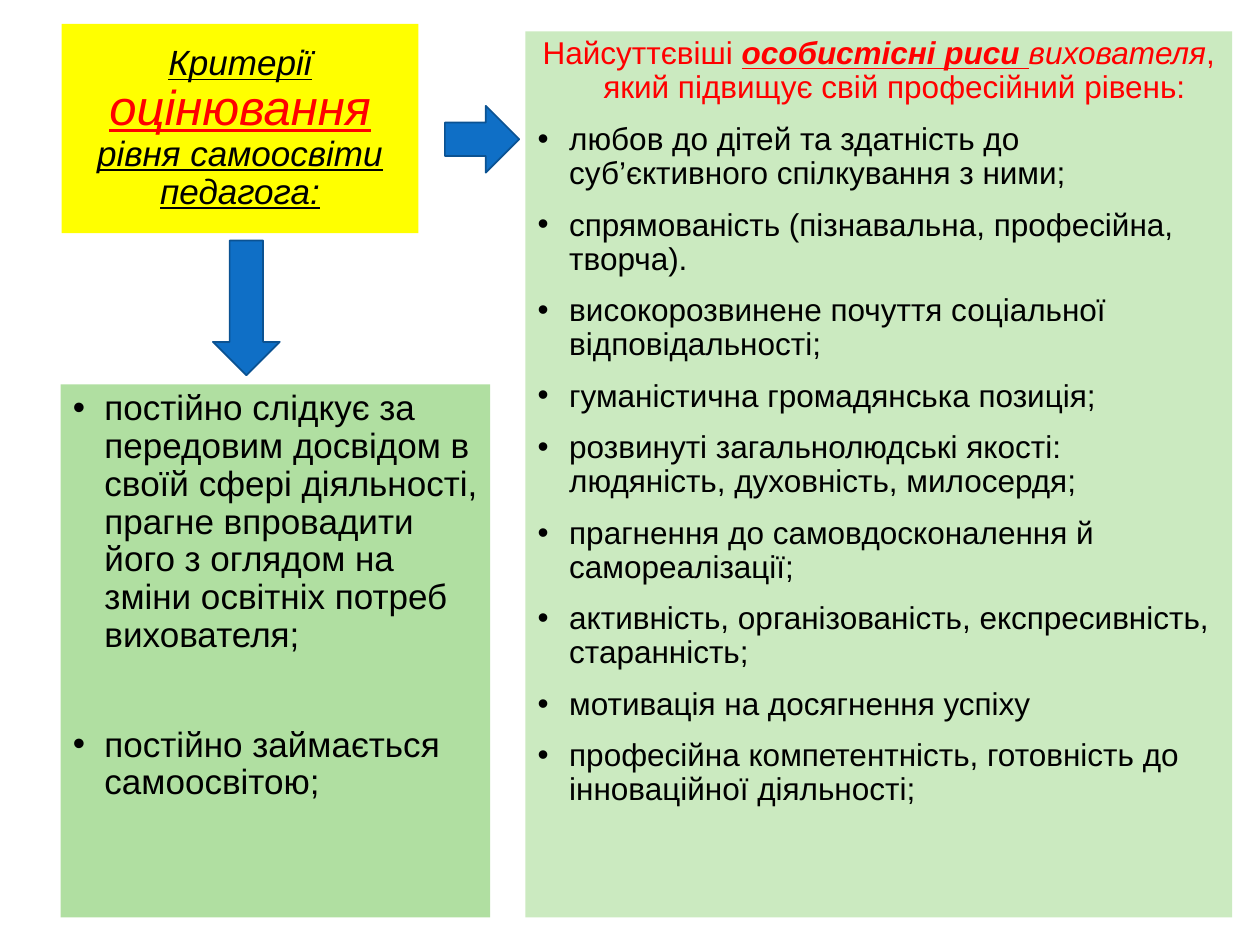
from dataclasses import dataclass

from lxml.etree import SubElement
from pptx import Presentation
from pptx.dml.color import RGBColor
from pptx.enum.shapes import MSO_SHAPE
from pptx.enum.text import MSO_ANCHOR, PP_ALIGN
from pptx.oxml.ns import qn
from pptx.shapes.autoshape import Shape
from pptx.util import Pt

COLORS = {
    "yellow": "FFFF00",
    "green": "B0DFA1",
    "pale": "CBEAC0",
    "blue": "0F6FC6",
    "navy": "0B5292",
    "red": "FF0000",
    "black": "000000",
}
HANG = 18
GAP = 10
WIDE_GAP = 41


@dataclass
class Box:
    left: float
    top: float
    width: float
    height: float
    fill: str
    kind: MSO_SHAPE = MSO_SHAPE.RECTANGLE
    line: str | None = None


TITLE = Box(35.3, 13.7, 203.8, 119.5, "yellow")
HABITS = Box(34.6, 219.6, 245.5, 304.6, "green")
TRAITS = Box(300.2, 18, 403.9, 506.2, "pale")
ARROWS = [
    Box(254.2, 60.5, 42.5, 38.2, "blue", MSO_SHAPE.RIGHT_ARROW, "navy"),
    Box(121.7, 137.5, 38.2, 77, "blue", MSO_SHAPE.DOWN_ARROW, "navy"),
]
HABIT_ITEMS = [
    "постійно слідкує за передовим досвідом в своїй сфері діяльності, "
    "прагне впровадити його з оглядом на зміни освітніх потреб вихователя;",
    "постійно займається самоосвітою;",
]
TRAIT_ITEMS = [
    "любов до дітей та здатність до суб’єктивного спілкування з ними;",
    "спрямованість (пізнавальна, професійна, творча).",
    "високорозвинене почуття соціальної відповідальності;",
    "гуманістична громадянська позиція;",
    "розвинуті загальнолюдські якості: людяність, духовність, милосердя;",
    "прагнення до самовдосконалення й самореалізації;",
    "активність, організованість, експресивність, старанність;",
    "мотивація на досягнення успіху",
    "професійна компетентність, готовність до інноваційної діяльності;",
]


def draw(slide, box: Box) -> Shape:
    lengths = (Pt(n) for n in (box.left, box.top, box.width, box.height))
    shape = slide.shapes.add_shape(box.kind, *lengths)
    shape.shadow.inherit = False
    shape.fill.solid()
    shape.fill.fore_color.rgb = RGBColor.from_string(COLORS[box.fill])
    if box.line:
        shape.line.color.rgb = RGBColor.from_string(COLORS[box.line])
        shape.line.width = Pt(1)
    else:
        shape.line.fill.background()
    shape.text_frame.word_wrap = True
    shape.text_frame.vertical_anchor = MSO_ANCHOR.TOP
    return shape


def start(shape: Shape, *, align=PP_ALIGN.LEFT, hang=HANG, bullet=False, gap=0):
    """Return the next paragraph of the shape, ready for runs."""
    frame = shape.text_frame
    para = frame.paragraphs[0]
    if para.runs:
        para = frame.add_paragraph()
    props = para._p.get_or_add_pPr()
    props.set("marL", str(Pt(hang)))
    props.set("indent", str(Pt(-hang)))
    if bullet:
        SubElement(props, qn("a:buFont")).set("typeface", "Arial")
        SubElement(props, qn("a:buChar")).set("char", "•")
    para.alignment = align
    para.line_spacing = 0.9
    para.space_before = Pt(gap)
    return para


def write(para, text: str, *, size=18, color="black",
          bold=False, italic=False, under=False) -> None:
    run = para.add_run()
    run.text = text
    font = run.font
    font.name = "Arial"
    font.size = Pt(size)
    font.bold, font.italic, font.underline = bold, italic, under
    font.color.rgb = RGBColor.from_string(COLORS[color])


def main() -> None:
    deck = Presentation()
    deck.slide_width, deck.slide_height = Pt(720), Pt(540)
    slide = deck.slides.add_slide(deck.slide_layouts[6])

    title = draw(slide, TITLE)
    title.text_frame.vertical_anchor = MSO_ANCHOR.MIDDLE
    para = start(title, align=PP_ALIGN.CENTER, hang=0)
    for text, size, color in [
        ("Критерії ", 20, "black"),
        ("оцінювання", 28, "red"),
        (" рівня самоосвіти педагога:", 20, "black"),
    ]:
        write(para, text, size=size, color=color, italic=True, under=True)

    habits = draw(slide, HABITS)
    for i, item in enumerate(HABIT_ITEMS):
        para = start(habits, bullet=True, gap=WIDE_GAP if i else 0)
        write(para, item, size=20)

    traits = draw(slide, TRAITS)
    para = start(traits, align=PP_ALIGN.CENTER)
    write(para, "Найсуттєвіші ", color="red")
    write(para, "особистісні риси ", color="red", bold=True, italic=True, under=True)
    write(para, "вихователя", color="red", italic=True)
    write(para, ", який підвищує свій професійний рівень:", color="red")
    for item in TRAIT_ITEMS:
        write(start(traits, bullet=True, gap=GAP), item)

    for arrow in ARROWS:
        draw(slide, arrow)

    deck.save("out.pptx")


if __name__ == "__main__":
    main()
